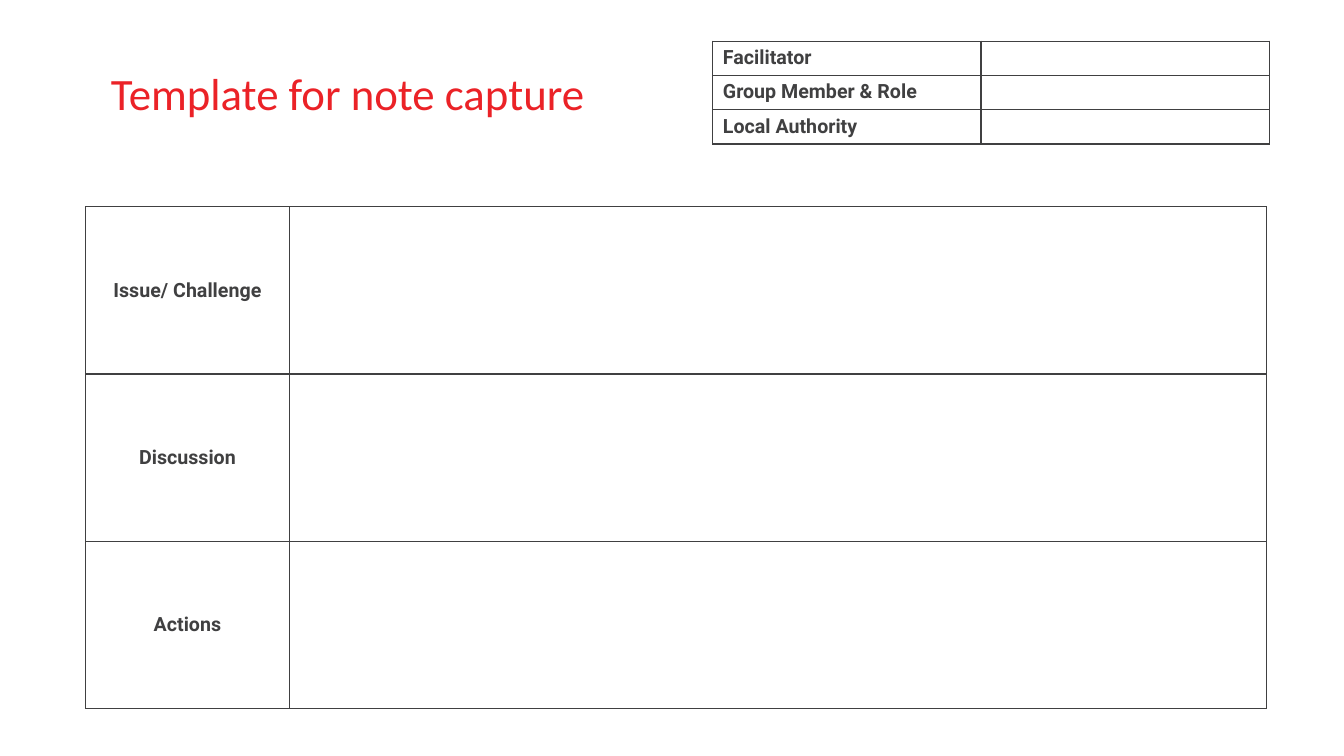
from lxml import etree
from pptx import Presentation
from pptx.dml.color import RGBColor
from pptx.enum.text import MSO_ANCHOR, PP_ALIGN
from pptx.oxml.ns import qn
from pptx.util import Inches, Pt

RED = RGBColor(0xEB, 0x22, 0x27)
GREY = RGBColor(0x40, 0x40, 0x41)
LEFT, CENTER = PP_ALIGN.LEFT, PP_ALIGN.CENTER
TOP, MIDDLE = MSO_ANCHOR.TOP, MSO_ANCHOR.MIDDLE


def add_border(cell):
    properties = cell._tc.get_or_add_tcPr()
    for position, side in enumerate(("a:lnL", "a:lnR", "a:lnT", "a:lnB")):
        line = etree.Element(qn(side), w=str(Pt(1)))
        fill = etree.SubElement(line, qn("a:solidFill"))
        etree.SubElement(fill, qn("a:srgbClr"), val=str(GREY))
        properties.insert(position, line)


def add_form(slide, left, top, widths, row_height, labels, align, anchor):
    frame = slide.shapes.add_table(
        len(labels), 2, Inches(left), Inches(top),
        Inches(sum(widths)), Inches(row_height * len(labels)))
    table = frame.table
    table.first_row = False
    table.horz_banding = False
    for column, width in zip(table.columns, widths):
        column.width = Inches(width)
    for row, label in zip(table.rows, labels):
        row.height = Inches(row_height)
        label_cell, note_cell = row.cells
        for cell in (label_cell, note_cell):
            cell.fill.background()
            add_border(cell)
        label_cell.vertical_anchor = anchor
        para = label_cell.text_frame.paragraphs[0]
        para.alignment = align
        span = para.add_run()
        span.text = label
        span.font.name = "Roboto"
        span.font.size = Pt(14)
        span.font.bold = True
        span.font.color.rgb = GREY
        note_para = note_cell.text_frame.paragraphs[0]
        etree.SubElement(note_para._p, qn("a:endParaRPr"), sz="1400")


deck = Presentation()
deck.slide_width = Inches(13.33)
deck.slide_height = Inches(7.5)
page = deck.slides.add_slide(deck.slide_layouts[5])

title = page.shapes.title
title.left, title.top = Inches(0.5), Inches(0.66)
title.width, title.height = Inches(12.69), Inches(0.61)
title_frame = title.text_frame
title_frame.margin_left = Inches(0.6)
title_frame.vertical_anchor = TOP
title_para = title_frame.paragraphs[0]
title_para.alignment = LEFT
title_para.line_spacing = 0.9
title_span = title_para.add_run()
title_span.text = "Template for note capture"
title_span.font.name = "Calibri"
title_span.font.size = Pt(32)
title_span.font.color.rgb = RED

add_form(page, 7.07, 0.41, (2.66, 2.86), 0.34,
         ("Facilitator", "Group Member & Role", "Local Authority"), LEFT, TOP)
add_form(page, 0.85, 2.05, (2.02, 9.69), 1.66,
         ("Issue/ Challenge", "Discussion", "Actions"), CENTER, MIDDLE)

deck.save("out.pptx")
